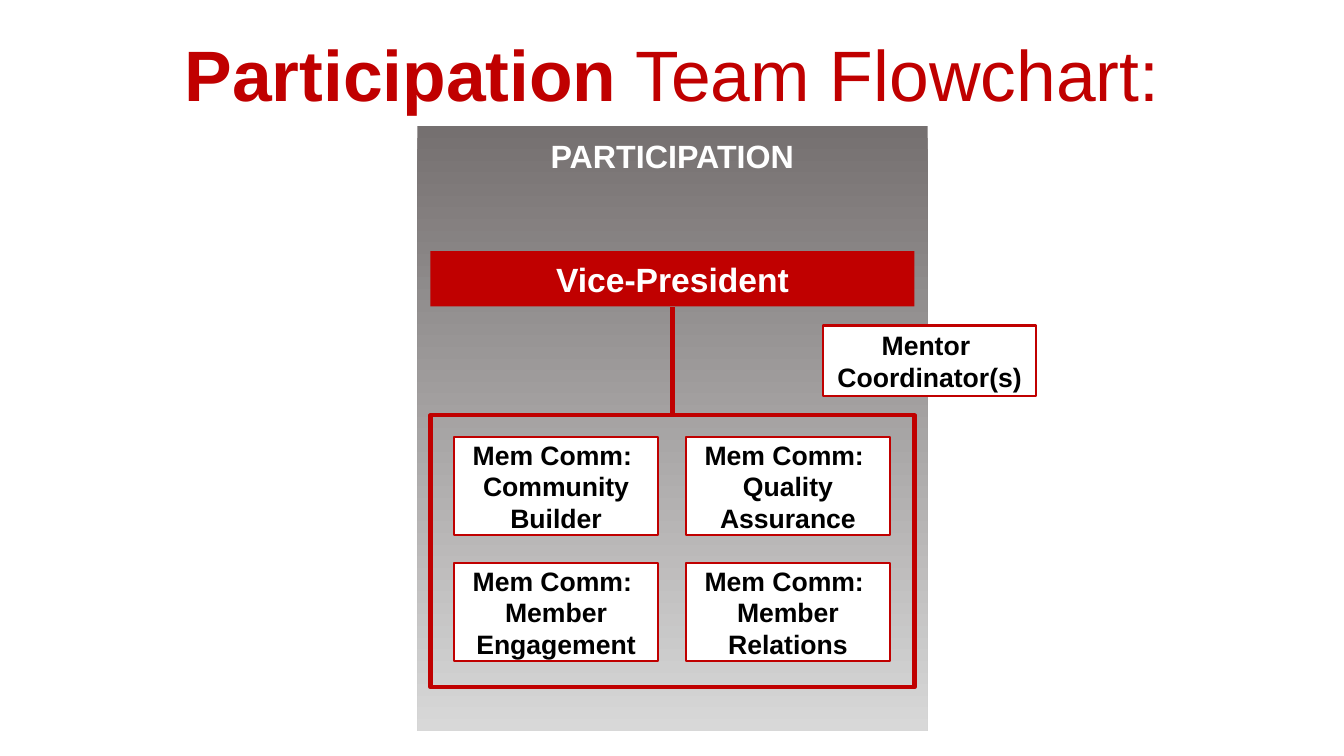
from lxml.etree import SubElement
from pptx import Presentation
from pptx.dml.color import RGBColor
from pptx.enum.shapes import MSO_CONNECTOR, MSO_SHAPE
from pptx.enum.text import MSO_ANCHOR, PP_ALIGN
from pptx.oxml.ns import qn
from pptx.util import Emu, Pt

EMU_PER_PX = 9144  # 100 px to the inch
SLIDE_W, SLIDE_H = 1333, 750
RED, WHITE, BLACK = "C00000", "FFFFFF", "000000"
PANEL_TOP, PANEL_BOTTOM = "757070", "D8D8D8"
FONT = "Arial"

COMMITTEES = [
    ["Community Builder", "Quality Assurance"],
    ["Member Engagement", "Member Relations"],
]


def px(length):
    return Emu(length * EMU_PER_PX)


def rgb(hex_color):
    return RGBColor.from_string(hex_color)


def add_run(paragraph, text, size, color, bold=True):
    run = paragraph.add_run()
    run.text = text
    run.font.name = FONT
    run.font.size = Pt(size)
    run.font.bold = bold
    run.font.color.rgb = rgb(color)


def set_up_text(frame, margin_x, margin_y, anchor):
    frame.word_wrap = True
    frame.vertical_anchor = anchor
    frame.margin_left = frame.margin_right = px(margin_x)
    frame.margin_top = frame.margin_bottom = px(margin_y)
    paragraph = frame.paragraphs[0]
    paragraph.alignment = PP_ALIGN.CENTER
    return paragraph


def add_title(slide, bold_part, plain_part):
    title = slide.shapes.add_textbox(px(0), px(20), px(SLIDE_W), px(104))
    paragraph = set_up_text(title.text_frame, 10, 5, MSO_ANCHOR.MIDDLE)
    add_run(paragraph, bold_part, 51, RED)
    add_run(paragraph, plain_part, 51, RED, bold=False)


def add_box(slide, left, top, width, height, fill=None, border=None):
    box = slide.shapes.add_shape(
        MSO_SHAPE.RECTANGLE, px(left), px(top), px(width), px(height))
    box.shadow.inherit = False
    if fill:
        box.fill.solid()
        box.fill.fore_color.rgb = rgb(fill)
    else:
        box.fill.background()
    if border:
        box.line.color.rgb = rgb(RED)
        box.line.width = Pt(border)
    else:
        box.line.fill.background()
    return box


def add_label(box, lines, size, color, anchor=MSO_ANCHOR.MIDDLE):
    paragraph = set_up_text(box.text_frame, 10, 10, anchor)
    for index, line in enumerate(lines):
        if index:
            paragraph.add_line_break()
        add_run(paragraph, line, size, color)


def add_panel(slide, heading):
    panel = add_box(slide, 414, 125, 506, 600)
    panel.fill.gradient()
    panel.fill.gradient_angle = 270
    for stop, color in zip(panel.fill.gradient_stops, (PANEL_TOP, PANEL_BOTTOM)):
        stop.color.rgb = rgb(color)
    add_label(panel, [heading], 23, WHITE, MSO_ANCHOR.TOP)


def add_role(slide, left, top, width, height, lines):
    role = add_box(slide, left, top, width, height, WHITE, 1.5)
    add_label(role, lines, 19, BLACK)


def add_link(slide, x, top, bottom):
    link = slide.shapes.add_connector(
        MSO_CONNECTOR.STRAIGHT, px(x), px(top), px(x), px(bottom))
    link.line.color.rgb = rgb(RED)
    link.line.width = Pt(3)
    SubElement(link._element.spPr, qn("a:effectLst"))


def main():
    deck = Presentation()
    deck.slide_width, deck.slide_height = px(SLIDE_W), px(SLIDE_H)
    slide = deck.slides.add_slide(deck.slide_layouts[6])

    # Panel and title
    add_panel(slide, "PARTICIPATION")
    add_title(slide, "Participation", " Team Flowchart:")

    # Vice-president linked to the committee frame
    add_box(slide, 427, 412, 480, 270, border=3)
    vice_president = add_box(slide, 427, 249, 480, 55, RED)
    add_label(vice_president, ["Vice-President"], 24, WHITE)
    add_link(slide, 667, 305, 412)

    # Committee grid
    for row, names in enumerate(COMMITTEES):
        for column, name in enumerate(names):
            add_role(slide, 450 + 230 * column, 434 + 125 * row, 203, 97,
                     ["Mem Comm: ", name])

    # Mentor coordinators beside the panel
    add_role(slide, 816, 323, 212, 70, ["Mentor ", "Coordinator(s)"])

    deck.save("out.pptx")


if __name__ == "__main__":
    main()
